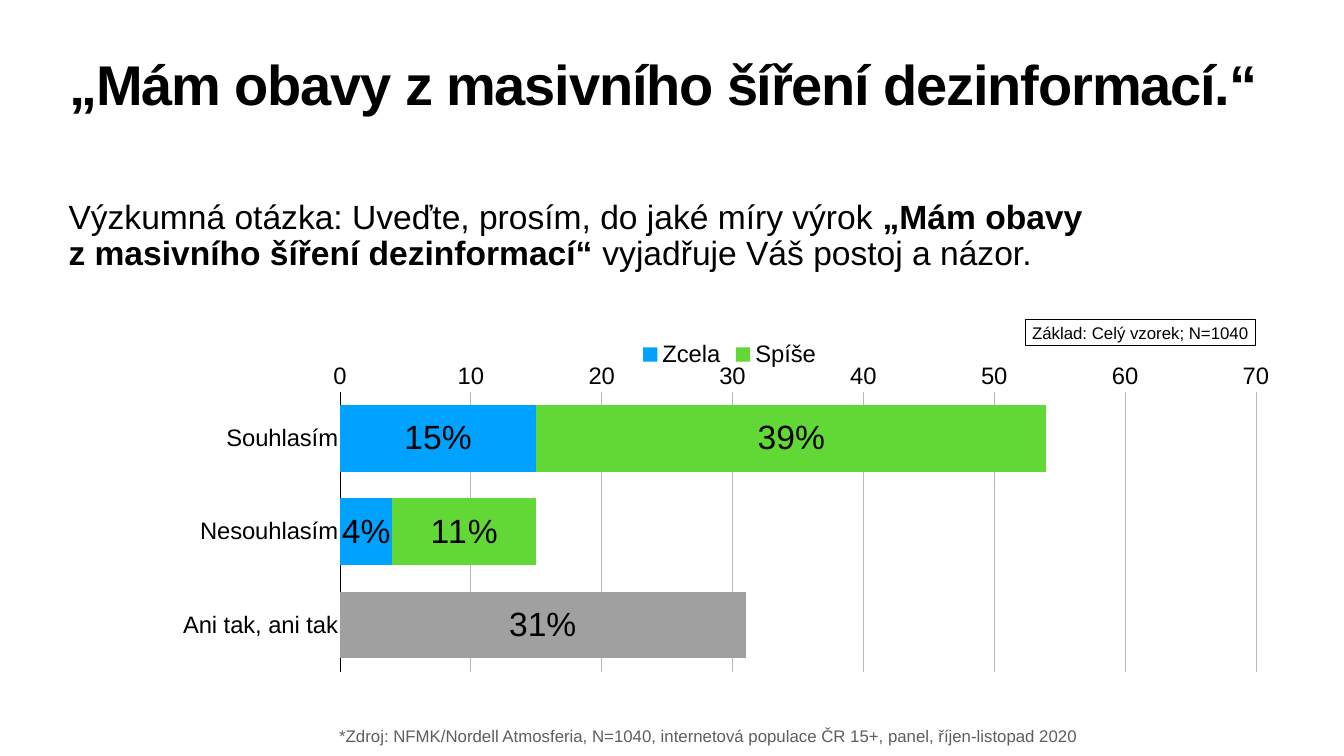
from dataclasses import dataclass

from pptx import Presentation
from pptx import util as u
from pptx.chart.data import CategoryChartData
from pptx.dml.color import RGBColor
from pptx.enum import chart as charts, shapes, text
from pptx.oxml import parse_xml
from pptx.oxml.ns import nsdecls, qn


@dataclass(frozen=True)
class Theme:
    font: str = "Arial"
    black: str = "000000"
    source: str = "5E5E5E"
    grid: str = "B8B8B8"
    fully: str = "00A2FF"
    rather: str = "61D836"
    neutral: str = "A0A0A0"
    title: int = 80
    body: int = 48
    axis: int = 34
    note: int = 24


THEME = Theme()


def color(value):
    return RGBColor.from_string(value)


def inches(*values):
    return [u.Inches(value) for value in values]


def style_font(font, size, fill=THEME.black, bold=False):
    font.name = THEME.font
    font.size = u.Pt(size)
    font.bold = bold
    font.color.rgb = color(fill)


def style_line(line, fill):
    line.color.rgb = color(fill)
    line.width = u.Pt(1)


def write(box, lines, size, fill=THEME.black, align=text.PP_ALIGN.LEFT,
          spacing=1.0, anchor=text.MSO_ANCHOR.TOP, tracking=None):
    frame = box.text_frame
    frame.word_wrap = True
    frame.auto_size = text.MSO_AUTO_SIZE.NONE
    frame.vertical_anchor = anchor
    frame.margin_left = frame.margin_right = u.Inches(0.06)
    frame.margin_top = frame.margin_bottom = u.Inches(0.06)
    para = frame.paragraphs[0]
    para.alignment = align
    para.line_spacing = spacing
    for number, spans in enumerate(lines):
        if number:
            para.add_line_break()
        for words, bold in spans:
            span = para.add_run()
            span.text = words
            style_font(span.font, size, fill, bold)
            if tracking is not None:
                span.font._element.set("spc", str(round(tracking * 100)))


def add_title(page, words):
    title = page.shapes.title
    title.left, title.top, title.width, title.height = inches(1.32, 1.18, 24.71, 2.71)
    write(title, [[(words, True)]], THEME.title, spacing=0.8, tracking=-1.7)


def add_text(page, place, lines, size, **style):
    write(page.shapes.add_textbox(*inches(*place)), lines, size, **style)


def add_framed_note(page, place, words):
    note = page.shapes.add_shape(shapes.MSO_SHAPE.RECTANGLE, *inches(*place))
    note.shadow.inherit = False
    note.fill.background()
    style_line(note.line, THEME.black)
    write(note, [[(words, False)]], THEME.note, align=text.PP_ALIGN.CENTER,
          anchor=text.MSO_ANCHOR.MIDDLE)


def set_layout(parent, index, target=None, **fractions):
    for old in parent.findall(qn("c:layout")):
        parent.remove(old)
    inner = f'<c:layoutTarget val="{target}"/>' if target else ""
    inner += "".join(f'<c:{side}Mode val="edge"/>' for side in "xy")
    inner += "".join(f'<c:{side} val="{value}"/>' for side, value in fractions.items())
    parent.insert(index, parse_xml(
        f'<c:layout {nsdecls("c")}><c:manualLayout>{inner}</c:manualLayout></c:layout>'))


def style_axes(chart):
    category, value = chart.category_axis, chart.value_axis
    for axis in (category, value):
        axis.major_tick_mark = axis.minor_tick_mark = charts.XL_TICK_MARK.NONE
        style_font(axis.tick_labels.font, THEME.axis)
    category.reverse_order = True
    category.crosses = charts.XL_AXIS_CROSSES.MINIMUM
    category.has_major_gridlines = False
    style_line(category.format.line, THEME.black)
    value.minimum_scale, value.maximum_scale, value.major_unit = 0, 70, 10
    value.tick_labels.number_format = "#,##0"
    value.tick_labels.number_format_is_linked = False
    value.format.line.fill.background()
    value.has_major_gridlines = True
    style_line(value.major_gridlines.format.line, THEME.grid)


def style_series(series, fill):
    series.format.fill.solid()
    series.format.fill.fore_color.rgb = color(fill)
    series.invert_if_negative = False
    labels = series.data_labels
    labels.show_value = True
    labels.position = charts.XL_LABEL_POSITION.CENTER
    labels.number_format = '#,##0"%"'
    labels.number_format_is_linked = False
    style_font(labels.font, THEME.body)


def add_opinion_chart(page, place, categories, answers):
    data = CategoryChartData()
    data.categories = categories
    for name, values, _ in answers:
        data.add_series(name, values)
    chart = page.shapes.add_chart(
        charts.XL_CHART_TYPE.BAR_STACKED, *inches(*place), data).chart
    chart.has_title = False
    style_font(chart.font, 10, THEME.source)
    style_axes(chart)

    plot = chart.plots[0]
    plot.gap_width, plot.overlap = 40, 100
    plot.vary_by_categories = False
    for series, (_, _, fill) in zip(plot.series, answers):
        style_series(series, fill)
    neutral = plot.series[0].points[len(categories) - 1].format.fill
    neutral.solid()
    neutral.fore_color.rgb = color(THEME.neutral)

    chart.has_legend = True
    legend = chart.legend
    legend.position = charts.XL_LEGEND_POSITION.TOP
    legend.include_in_layout = True
    style_font(legend.font, THEME.axis)
    set_layout(legend._element, 1, x=0.47, y=0.04)
    set_layout(chart._chartSpace.chart.plotArea, 0, "inner",
               x=0.226, y=0.181, w=0.757, h=0.712)


def main():
    deck = Presentation()
    deck.slide_width, deck.slide_height = inches(26.67, 15)
    page = deck.slides.add_slide(deck.slide_layouts[5])
    add_title(page, "„Mám obavy z masivního šíření dezinformací.“")
    add_text(page, (1.3, 3.92, 24.03, 1.8), [
        [("Výzkumná otázka: Uveďte, prosím, do jaké míry výrok ", False),
         ("„Mám obavy ", True)],
        [("z masivního šíření dezinformací“", True),
         (" vyjadřuje Váš postoj a názor.", False)],
    ], THEME.body, spacing=0.9)
    add_opinion_chart(
        page, (1.32, 6.36, 24.01, 7.8),
        ["Souhlasím", "Nesouhlasím", "Ani tak, ani tak"],
        [("Zcela", (15, 4, 31), THEME.fully),
         ("Spíše", (39, 11, None), THEME.rather)])
    add_framed_note(page, (20.34, 6.34, 4.57, 0.52), "Základ: Celý vzorek; N=1040")
    source = ("*Zdroj: NFMK/Nordell Atmosferia, N=1040, internetová populace "
              "ČR 15+, panel, říjen-listopad 2020")
    add_text(page, (6.31, 14.34, 15.48, 0.5), [[(source, False)]], THEME.note,
             fill=THEME.source, align=text.PP_ALIGN.CENTER)
    deck.save("out.pptx")


if __name__ == "__main__":
    main()
